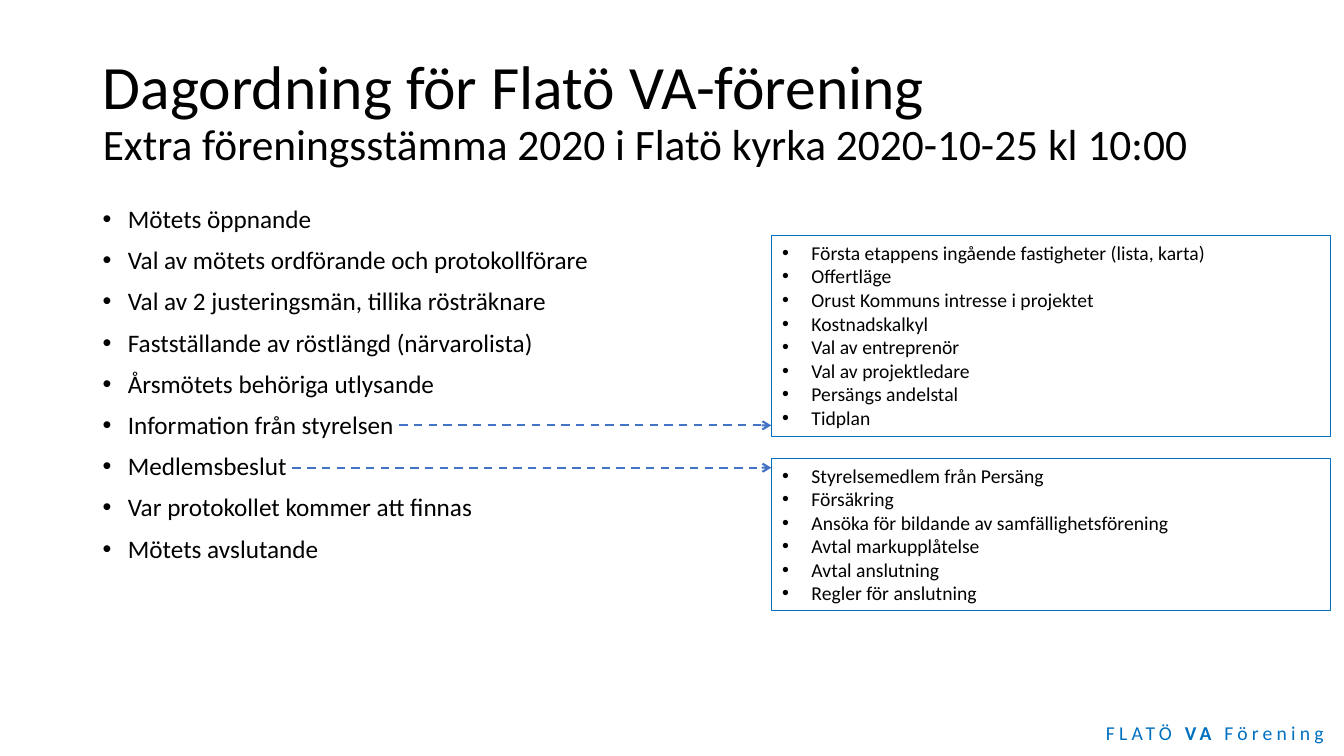
from pptx import Presentation
from pptx.dml.color import RGBColor
from pptx.enum.dml import MSO_LINE
from pptx.enum.shapes import MSO_CONNECTOR, MSO_SHAPE
from pptx.enum.text import MSO_ANCHOR, PP_ALIGN
from pptx.oxml.ns import qn
from pptx.util import Inches, Pt
from lxml.etree import SubElement

BLACK = RGBColor(0x00, 0x00, 0x00)
FOOTER_BLUE = RGBColor(0x00, 0x70, 0xC0)
BORDER_BLUE = RGBColor(0x02, 0x6F, 0xC0)
ARROW_BLUE = RGBColor(0x44, 0x72, 0xC4)
FONT = "Calibri"
WIDTH, HEIGHT = 13.33, 7.5
MARGIN = 0.92
CONTENT_WIDTH = 11.5
DETAIL_LEFT, DETAIL_WIDTH = 7.65, 5.55

AGENDA = [
    "Mötets öppnande",
    "Val av mötets ordförande och protokollförare",
    "Val av 2 justeringsmän, tillika rösträknare",
    "Fastställande av röstlängd (närvarolista)",
    "Årsmötets behöriga utlysande",
    "Information från styrelsen",
    "Medlemsbeslut",
    "Var protokollet kommer att finnas",
    "Mötets avslutande",
]
INFORMATION = [
    "Första etappens ingående fastigheter (lista, karta)",
    "Offertläge",
    "Orust Kommuns intresse i projektet",
    "Kostnadskalkyl",
    "Val av entreprenör",
    "Val av projektledare",
    "Persängs andelstal",
    "Tidplan",
]
DECISIONS = [
    "Styrelsemedlem från Persäng",
    "Försäkring",
    "Ansöka för bildande av samfällighetsförening",
    "Avtal markupplåtelse",
    "Avtal anslutning",
    "Regler för anslutning",
]


def add_text(paragraph, text, size, color=BLACK, bold=False, spacing=0):
    run = paragraph.add_run()
    run.text = text
    run.font.name = FONT
    run.font.size = Pt(size)
    run.font.bold = bold
    run.font.color.rgb = color
    if spacing:
        run.font._element.set("spc", str(spacing * 100))


def add_bullets(frame, items, size, indent, hanging, line_spacing=1.0, space_before=0):
    frame.word_wrap = True
    for index, item in enumerate(items):
        paragraph = frame.add_paragraph() if index else frame.paragraphs[0]
        properties = paragraph._p.get_or_add_pPr()
        properties.set("marL", str(Inches(indent)))
        properties.set("indent", str(-Inches(hanging)))
        SubElement(properties, qn("a:buFont")).set("typeface", "Arial")
        SubElement(properties, qn("a:buChar")).set("char", "•")
        paragraph.alignment = PP_ALIGN.LEFT
        paragraph.line_spacing = line_spacing
        paragraph.space_before = Pt(space_before if index else 0)
        add_text(paragraph, item, size)


def add_title(slide, left, top, width, height):
    title = slide.shapes.title
    title.left, title.top = Inches(left), Inches(top)
    title.width, title.height = Inches(width), Inches(height)
    frame = title.text_frame
    frame.word_wrap = True
    frame.vertical_anchor = MSO_ANCHOR.MIDDLE
    paragraph = frame.paragraphs[0]
    paragraph.alignment = PP_ALIGN.LEFT
    paragraph.line_spacing = 0.9
    add_text(paragraph, "Dagordning för Flatö VA-förening", 44)
    paragraph.add_line_break()
    add_text(paragraph, "Extra föreningsstämma 2020 i Flatö kyrka 2020-10-25 kl 10:00", 31)


def add_agenda(slide, left, top, width, height):
    agenda = slide.shapes.add_textbox(Inches(left), Inches(top), Inches(width), Inches(height))
    add_bullets(agenda.text_frame, AGENDA, 18, 0.25, 0.25, line_spacing=0.9, space_before=10)


def add_detail_box(slide, items, left, top, width, height):
    box = slide.shapes.add_shape(
        MSO_SHAPE.RECTANGLE, Inches(left), Inches(top), Inches(width), Inches(height))
    box.shadow.inherit = False
    box.fill.background()
    box.line.color.rgb = BORDER_BLUE
    box.line.width = Pt(0.75)
    box.text_frame.vertical_anchor = MSO_ANCHOR.TOP
    add_bullets(box.text_frame, items, 14, 0.3, 0.29)


def add_arrow(slide, start, end, top):
    arrow = slide.shapes.add_connector(
        MSO_CONNECTOR.STRAIGHT, Inches(start), Inches(top), Inches(end), Inches(top))
    arrow.line.color.rgb = ARROW_BLUE
    arrow.line.width = Pt(1.5)
    arrow.line.dash_style = MSO_LINE.DASH
    SubElement(arrow.line._get_or_add_ln(), qn("a:tailEnd")).set("type", "arrow")
    SubElement(arrow._element.spPr, qn("a:effectLst"))


def add_footer(slide, left, top, width, height):
    footer = slide.shapes.add_textbox(Inches(left), Inches(top), Inches(width), Inches(height))
    footer.text_frame.word_wrap = False
    paragraph = footer.text_frame.paragraphs[0]
    for text, bold in (("FLATÖ ", False), ("VA", True), (" Förening", False)):
        add_text(paragraph, text, 14, color=FOOTER_BLUE, bold=bold, spacing=3)


def main():
    presentation = Presentation()
    presentation.slide_width, presentation.slide_height = Inches(WIDTH), Inches(HEIGHT)
    slide = presentation.slides.add_slide(presentation.slide_layouts[5])
    add_footer(slide, 10.87, 7.1, 2.41, 0.34)
    add_title(slide, MARGIN, 0.4, CONTENT_WIDTH, 1.45)
    add_agenda(slide, MARGIN, 2, CONTENT_WIDTH, 4.76)
    add_detail_box(slide, DECISIONS, DETAIL_LEFT, 4.55, DETAIL_WIDTH, 1.51)
    add_detail_box(slide, INFORMATION, DETAIL_LEFT, 2.34, DETAIL_WIDTH, 1.99)
    for start, top in ((3.96, 4.22), (2.9, 4.64)):
        add_arrow(slide, start, DETAIL_LEFT, top)
    presentation.save("out.pptx")


if __name__ == "__main__":
    main()
